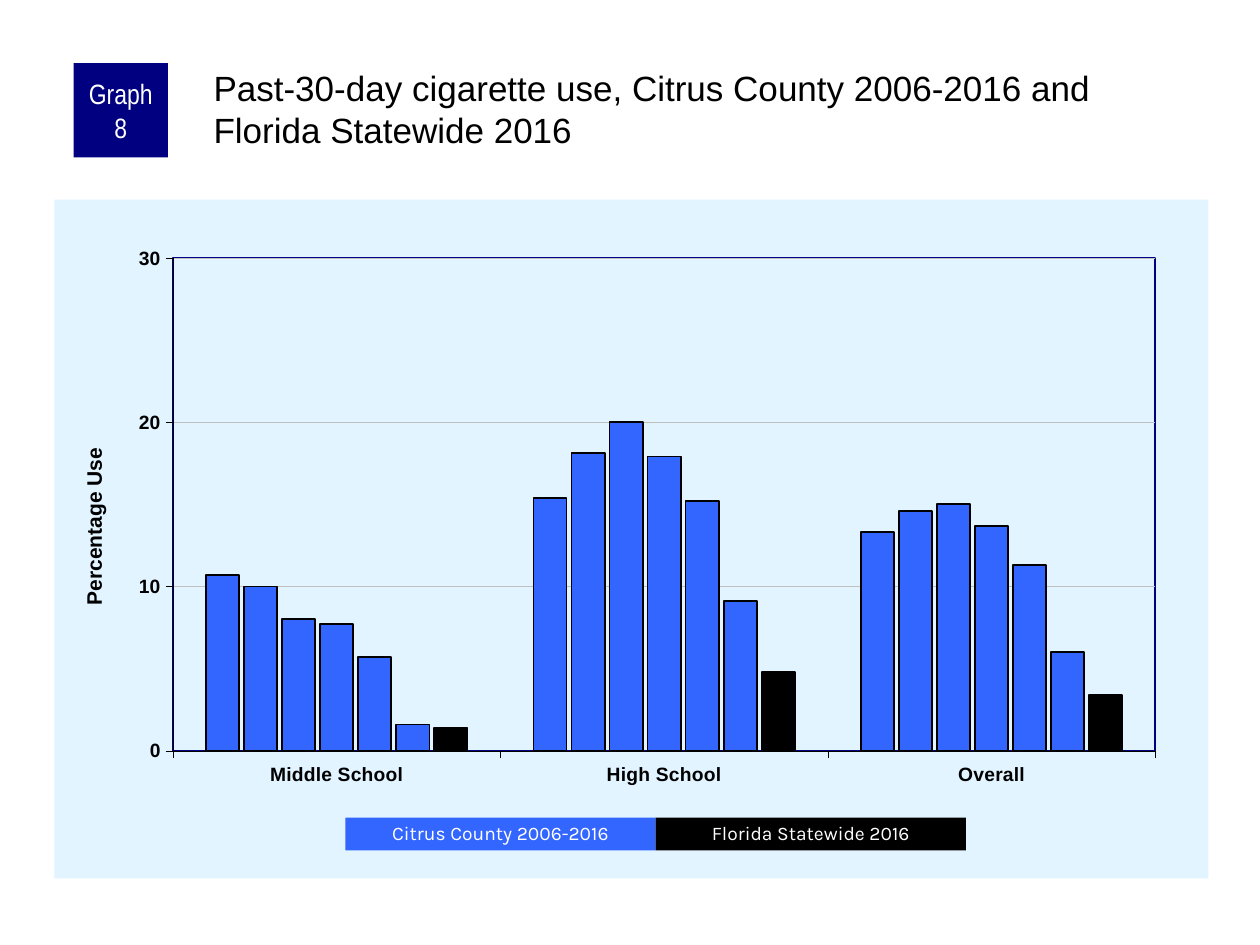
from lxml import etree
from pptx import Presentation
from pptx.chart.data import CategoryChartData
from pptx.dml.color import RGBColor
from pptx.enum.chart import XL_CHART_TYPE, XL_TICK_MARK
from pptx.enum.shapes import MSO_SHAPE
from pptx.enum.text import MSO_ANCHOR, MSO_AUTO_SIZE, PP_ALIGN
from pptx.oxml import parse_xml
from pptx.oxml.ns import nsdecls, qn
from pptx.util import Pt

COLUMNS = XL_CHART_TYPE.COLUMN_CLUSTERED
TICK_OUT, TICK_NONE = XL_TICK_MARK.OUTSIDE, XL_TICK_MARK.NONE
RECTANGLE = MSO_SHAPE.RECTANGLE
TOP, MIDDLE = MSO_ANCHOR.TOP, MSO_ANCHOR.MIDDLE
LEFT, CENTER = PP_ALIGN.LEFT, PP_ALIGN.CENTER
NO_AUTOFIT = MSO_AUTO_SIZE.NONE

BLUE, BLACK, NAVY, WHITE = "3366FF", "000000", "000080", "FFFFFF"
PALE_BLUE, GREY = "E1F4FF", "C0C0C0"

CATEGORIES = ["Middle School", "High School", "Overall"]
COUNTY_VALUES = [
    (10.7, 15.4, 13.3),
    (10, 18.1, 14.6),
    (8, 20, 15),
    (7.7, 17.9, 13.7),
    (5.7, 15.2, 11.3),
    (1.6, 9.1, 6),
]
STATE_VALUES = (1.4, 4.8, 3.4)


def color(value):
    return RGBColor.from_string(value)


def set_values(target, values):
    for name, value in values.items():
        setattr(target, name, value)


def set_font(font, size, face, hue, bold=False):
    set_values(font, {"size": Pt(size), "name": face, "bold": bold})
    font.color.rgb = color(hue)


def set_line(line, hue, width):
    line.color.rgb = color(hue)
    line.width = Pt(width)


def write(box, text, font, align, anchor, insets, spacing=1.0):
    frame = box.text_frame
    names = ("margin_left", "margin_top", "margin_right", "margin_bottom")
    set_values(frame, dict(zip(names, map(Pt, insets))))
    set_values(frame, {"word_wrap": True, "auto_size": NO_AUTOFIT,
                       "vertical_anchor": anchor})
    para = frame.paragraphs[0]
    set_values(para, {"alignment": align, "line_spacing": spacing})
    span = para.add_run()
    span.text = text
    set_font(span.font, *font)


def add_label(page, place, fill, text, font, insets, spacing=1.0):
    box = page.shapes.add_shape(RECTANGLE, *map(Pt, place))
    box.shadow.inherit = False
    box.fill.solid()
    box.fill.fore_color.rgb = color(fill)
    box.line.fill.background()
    write(box, text, font, CENTER, MIDDLE, insets, spacing)


def set_title(page, text):
    title = page.shapes.title
    set_values(title, {"left": Pt(120), "top": Pt(36),
                       "width": Pt(570), "height": Pt(60)})
    write(title, text, (20, "Arial", BLACK), LEFT, TOP, (2, 2, 0, 0))


def set_layout(element, index, places):
    """Place a chart part by fractions of the chart's size."""
    for old in element.findall(qn("c:layout")):
        element.remove(old)
    layout = parse_xml(f"<c:layout {nsdecls('c')}><c:manualLayout/></c:layout>")
    for name, value in places.items():
        etree.SubElement(layout[0], qn(f"c:{name}")).set("val", str(value))
    element.insert(index, layout)


def chart_format(fill, line):
    return parse_xml(f"<c:spPr {nsdecls('c', 'a')}>{fill}{line}</c:spPr>")


def solid(hue):
    return f'<a:solidFill><a:srgbClr val="{hue}"/></a:solidFill>'


def format_axis(axis):
    axis.major_tick_mark, axis.minor_tick_mark = TICK_OUT, TICK_NONE
    set_font(axis.tick_labels.font, 11, "Arial", BLACK, True)
    set_line(axis.format.line, BLACK, 0.25)


def add_use_chart(page):
    data = CategoryChartData()
    data.categories = CATEGORIES
    for number, values in enumerate(COUNTY_VALUES + [STATE_VALUES], 1):
        data.add_series(f"Series {number}", values)
    place = map(Pt, (31, 114, 659.5, 388))
    chart = page.shapes.add_chart(COLUMNS, *place, data).chart
    set_values(chart, {"has_legend": False, "has_title": False})
    set_font(chart.font, 8, "Arial", BLACK)

    # Columns
    plot = chart.plots[0]
    set_values(plot, {"gap_width": 200, "overlap": -15, "vary_by_categories": False})
    for series in plot.series:
        state = series.name == f"Series {len(COUNTY_VALUES) + 1}"
        series.format.fill.solid()
        series.format.fill.fore_color.rgb = color(BLACK if state else BLUE)
        set_line(series.format.line, BLACK, 1)

    # Axes
    format_axis(chart.category_axis)
    axis = chart.value_axis
    format_axis(axis)
    set_values(axis, {"minimum_scale": 0, "maximum_scale": 30, "major_unit": 10})
    set_line(axis.major_gridlines.format.line, GREY, 0.25)
    span = axis.axis_title.text_frame.paragraphs[0].add_run()
    span.text = "Percentage Use"
    set_font(span.font, 12, "Arial", BLACK, True)
    set_layout(axis.axis_title._element, 1,
               {"xMode": "edge", "yMode": "edge", "x": 0.02, "y": 0.36})

    # Plot frame and chart background
    space = chart._chartSpace
    area = space.chart.plotArea
    set_layout(area, 0, {"layoutTarget": "inner", "xMode": "edge", "yMode": "edge",
                         "x": 0.103, "y": 0.086, "w": 0.851, "h": 0.726})
    area.append(chart_format("<a:noFill/>", f'<a:ln w="{Pt(1)}">{solid(NAVY)}</a:ln>'))
    space.chart.addnext(chart_format(solid(PALE_BLUE), "<a:ln><a:noFill/></a:ln>"))


def main():
    deck = Presentation()
    set_values(deck, {"slide_width": Pt(720), "slide_height": Pt(540)})
    page = deck.slides.add_slide(deck.slide_layouts[5])

    # Heading
    set_title(page, "Past-30-day cigarette use, Citrus County 2006-2016 "
                    "and Florida Statewide 2016")

    # Chart and graph number
    add_use_chart(page)
    add_label(page, (42, 36, 54, 54), NAVY, "Graph 8",
              (16, "Arial Narrow", WHITE), (3.6, 0, 3.6, 0))

    # Legend
    width = 177.3
    legend = [("Citrus County 2006-2016", BLUE), ("Florida Statewide 2016", BLACK)]
    for index, (text, fill) in enumerate(legend):
        add_label(page, (197.4 + index * width, 467.2, width, 18.7), fill, text,
                  (11, "Karla", WHITE), (7.2, 3.6, 7.2, 3.6), 0.9)

    deck.save("out.pptx")


if __name__ == "__main__":
    main()
